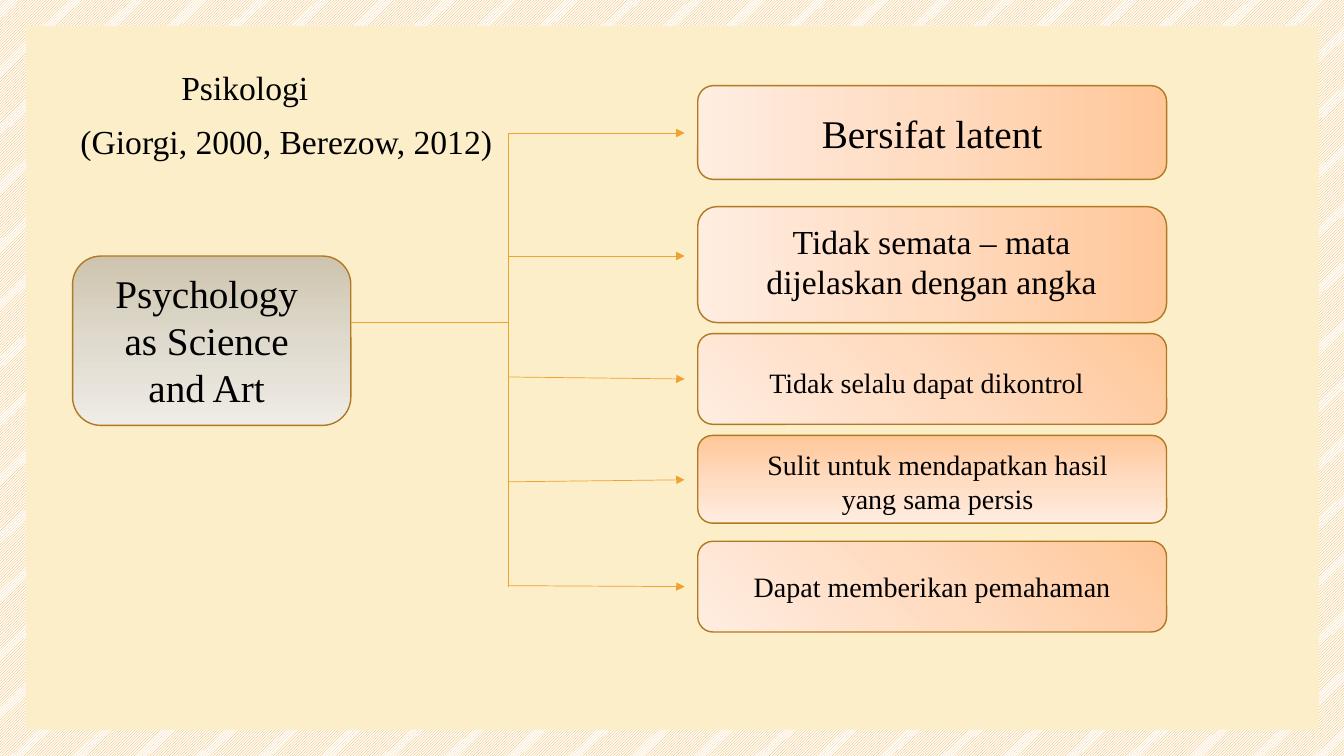
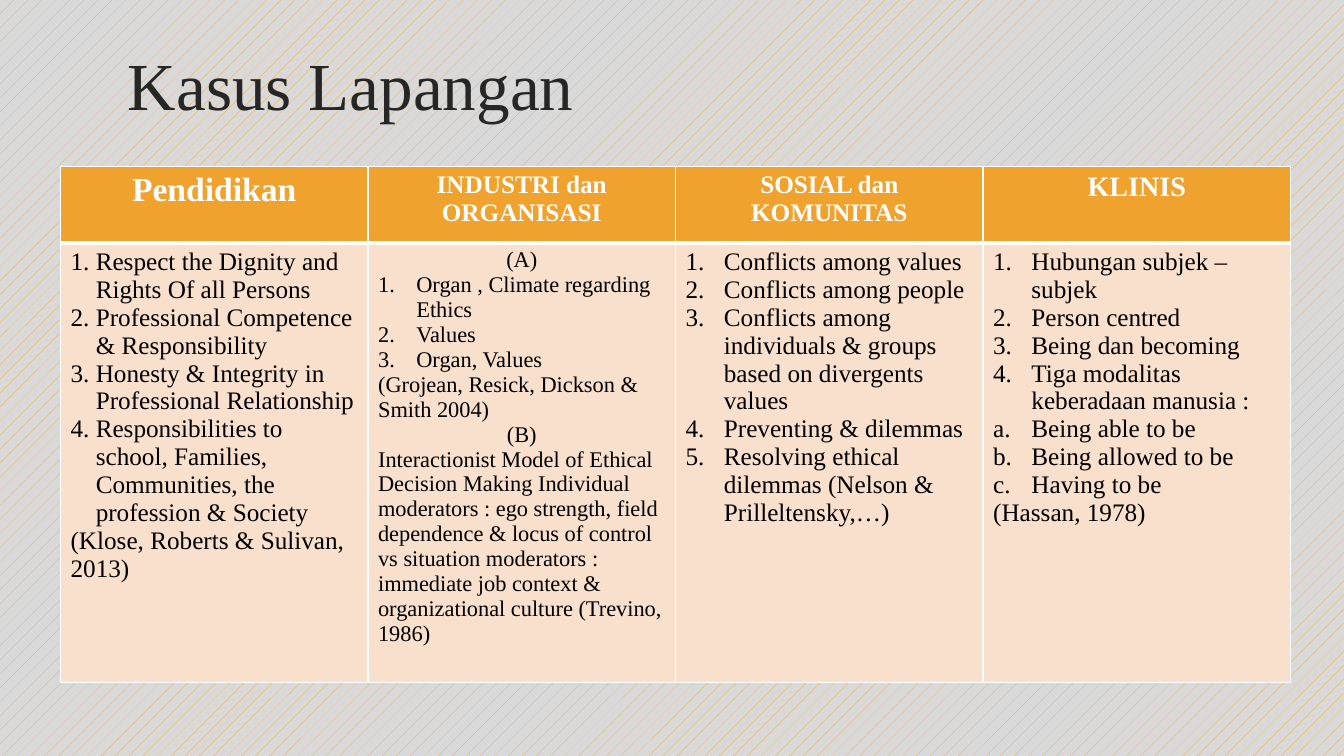
from lxml import etree
from pptx import Presentation
from pptx import util as u
from pptx.dml.color import RGBColor
from pptx.enum import dml, shapes, text
from pptx.oxml import ns

FONT = "Times New Roman"
BLACK = RGBColor(0x00, 0x00, 0x00)
WHITE = RGBColor(0xFF, 0xFF, 0xFF)
CHARCOAL = RGBColor(0x26, 0x26, 0x26)
ORANGE = RGBColor(0xF0, 0xA2, 0x2E)
BROWN = RGBColor(0xB2, 0x78, 0x22)
CREAM = RGBColor(0xFB, 0xEE, 0xC9)
GREY = RGBColor(0xD9, 0xD9, 0xD9)
PEACH = RGBColor(0xF9, 0xE0, 0xCD)
STONE_STOPS = [RGBColor(0xCE, 0xC4, 0xAE), RGBColor(0xDF, 0xDA, 0xCD), RGBColor(0xEF, 0xEC, 0xE6)]
PEACH_STOPS = [RGBColor(0xFF, 0xC7, 0x98), RGBColor(0xFF, 0xDB, 0xC0), RGBColor(0xFF, 0xED, 0xE0)]

CENTER = text.PP_ALIGN.CENTER
LEFT = text.PP_ALIGN.LEFT
MIDDLE = text.MSO_ANCHOR.MIDDLE
TOP = text.MSO_ANCHOR.TOP
CORNER = "corner"

TRAITS = [
    (0.85, 0.93, 180, 28, "Bersifat latent", None),
    (2.05, 1.15, 180, 24, "Tidak semata – mata dijelaskan dengan angka", (0.41, 0.09, 3.82, 0.91)),
    (3.31, 0.9, 135, 20, "Tidak selalu dapat dikontrol", (0.15, 0.27, 4.24, 0.44)),
    (4.32, 0.87, 90, 20, "Sulit untuk mendapatkan hasil yang sama persis", (0.41, 0.07, 3.94, 0.77)),
    (5.37, 0.9, CORNER, 20, "Dapat memberikan pemahaman", None),
]
ARROWS = [(1.32, 1.32), (2.54, 2.54), (3.74, 3.76), (4.78, 4.76), (5.81, 5.82)]

HEADERS = [("Pendidikan", 24), ("INDUSTRI dan ORGANISASI", 18),
           ("SOSIAL dan KOMUNITAS", 18), ("KLINIS", 20)]
NUMBER, LETTER, MIDLINE, PLAIN = "arabicPeriod", "alphaLcPeriod", "center", "plain"
CASES = [
    (18, 0.25, [
        (NUMBER, "Respect the Dignity and Rights Of all Persons"),
        (NUMBER, "Professional Competence & Responsibility"),
        (NUMBER, "Honesty & Integrity in Professional Relationship"),
        (NUMBER, "Responsibilities to school, Families, Communities, the profession & Society"),
        (PLAIN, "(Klose, Roberts & Sulivan, 2013)"),
    ]),
    (16, 0.38, [
        (MIDLINE, "(A)"),
        (NUMBER, "Organ , Climate regarding Ethics"),
        (NUMBER, "Values"),
        (NUMBER, "Organ, Values"),
        (PLAIN, "(Grojean, Resick, Dickson & Smith 2004)"),
        (MIDLINE, "(B)"),
        (PLAIN, "Interactionist Model of Ethical Decision Making Individual moderators : "
                "ego strength, field dependence & locus of control vs situation moderators : "
                "immediate job context & organizational culture (Trevino, 1986)"),
    ]),
    (18, 0.38, [
        (NUMBER, "Conflicts among values"),
        (NUMBER, "Conflicts among people"),
        (NUMBER, "Conflicts among individuals & groups based on divergents values"),
        (NUMBER, "Preventing & dilemmas"),
        (NUMBER, "Resolving ethical dilemmas (Nelson & Prilleltensky,…)"),
    ]),
    (18, 0.38, [
        (NUMBER, "Hubungan subjek – subjek"),
        (NUMBER, "Person centred"),
        (NUMBER, "Being dan becoming"),
        (NUMBER, "Tiga modalitas keberadaan manusia :"),
        (LETTER, "Being able to be"),
        (LETTER, "Being allowed to be"),
        (LETTER, "Having to be"),
        (PLAIN, "(Hassan, 1978)"),
    ]),
]


def inches(box):
    return [u.Inches(length) for length in box]


def add_element(parent, tag, **attributes):
    return etree.SubElement(parent, ns.qn(tag), attributes)


def add_color(parent, color):
    add_element(parent, "a:srgbClr", val=str(color))


def add_run(paragraph, words, size, color=BLACK, bold=False):
    run = paragraph.add_run()
    run.text = words
    run.font.name = FONT
    run.font.size = u.Pt(size)
    run.font.bold = bold
    run.font.color.rgb = color


def add_text(slide, box, lines, size, color=BLACK, align=LEFT, anchor=TOP):
    frame = slide.shapes.add_textbox(*inches(box)).text_frame
    frame.word_wrap = True
    frame.vertical_anchor = anchor
    for index, line in enumerate(lines):
        paragraph = frame.paragraphs[0] if index == 0 else frame.add_paragraph()
        paragraph.alignment = align
        add_run(paragraph, line, size, color)
    return frame


def set_gradient(shape, stops, direction):
    shape.fill.background()
    properties = shape.element.spPr
    gradient = etree.Element(ns.qn("a:gradFill"), rotWithShape="1")
    stop_list = add_element(gradient, "a:gsLst")
    for index, color in enumerate(stops):
        add_color(add_element(stop_list, "a:gs", pos=str(index * 50000)), color)
    if direction == CORNER:
        circle = add_element(gradient, "a:path", path="circle")
        add_element(circle, "a:fillToRect", l="100000", b="100000")
    else:
        add_element(gradient, "a:lin", ang=str(direction * 60000), scaled="0")
    properties.replace(properties.find(ns.qn("a:noFill")), gradient)


def add_card(slide, box, stops, direction):
    card = slide.shapes.add_shape(shapes.MSO_SHAPE.ROUNDED_RECTANGLE, *inches(box))
    card.shadow.inherit = False
    set_gradient(card, stops, direction)
    card.line.color.rgb = BROWN
    card.line.width = u.Pt(1)
    return card


def add_line(slide, start, end, arrow=False):
    line = slide.shapes.add_connector(shapes.MSO_CONNECTOR.STRAIGHT, *inches(start + end))
    line.line.color.rgb = ORANGE
    line.line.width = u.Pt(0.5)
    properties = line.element.spPr
    if arrow:
        add_element(properties.find(ns.qn("a:ln")), "a:tailEnd", type="triangle")
    add_element(properties, "a:effectLst")


def add_slide(presentation, pattern, back_color):
    slide = presentation.slides.add_slide(presentation.slide_layouts[6])
    fill = slide.background.fill
    fill.patterned()
    fill.pattern = pattern
    fill.fore_color.rgb = ORANGE
    fill.back_color.rgb = back_color
    return slide


def add_trait(slide, left, width, trait):
    top, height, direction, size, words, label = trait
    card = add_card(slide, (left, top, width, height), PEACH_STOPS, direction)
    if label:
        across, down, label_width, label_height = label
        add_text(slide, (left + across, top + down, label_width, label_height),
                 [words], size, align=CENTER)
        return
    frame = card.text_frame
    frame.word_wrap = True
    frame.vertical_anchor = MIDDLE
    frame.paragraphs[0].alignment = CENTER
    add_run(frame.paragraphs[0], words, size)


def add_branches(slide, start, trunk, tip):
    add_line(slide, (start, 3.2), (trunk, 3.2))
    add_line(slide, (trunk, ARROWS[0][0]), (trunk, ARROWS[-1][1]))
    for begin, end in ARROWS:
        add_line(slide, (trunk, begin), (tip, end), arrow=True)


def build_psychology(presentation):
    slide = add_slide(presentation, dml.MSO_PATTERN.DARK_UPWARD_DIAGONAL, WHITE)
    panel = slide.shapes.add_shape(shapes.MSO_SHAPE.RECTANGLE, *inches((0.26, 0.26, 12.82, 6.98)))
    panel.shadow.inherit = False
    panel.fill.solid()
    panel.fill.fore_color.rgb = CREAM
    panel.line.fill.background()

    heading = add_text(slide, (0.7, 0.59, 11, 5.9), ["Psikologi", "(Giorgi, 2000, Berezow, 2012)"], 24)
    first, second = heading.paragraphs
    first.line_spacing = second.line_spacing = 1.05
    first._p.get_or_add_pPr().set("marL", str(u.Inches(1)))
    second.space_before = u.Pt(9)

    add_card(slide, (0.72, 2.54, 2.76, 1.68), STONE_STOPS, 90)
    add_text(slide, (1.03, 2.62, 2.04, 1.51), ["Psychology as Science and Art"], 28, align=CENTER)
    for trait in TRAITS:
        add_trait(slide, 6.92, 4.65, trait)
    add_branches(slide, 3.48, 5.04, 6.79)


def style_cell(cell, color, borders):
    properties = cell._tc.get_or_add_tcPr()
    for side, width in borders.items():
        border = add_element(properties, f"a:ln{side}", w=str(u.Pt(width)))
        add_color(add_element(border, "a:solidFill"), WHITE)
    cell.fill.solid()
    cell.fill.fore_color.rgb = color


def fill_case(cell, size, indent, lines):
    frame = cell.text_frame
    for index, (kind, words) in enumerate(lines):
        paragraph = frame.paragraphs[0] if index == 0 else frame.add_paragraph()
        paragraph.alignment = CENTER if kind == MIDLINE else LEFT
        if kind in (NUMBER, LETTER):
            properties = paragraph._p.get_or_add_pPr()
            properties.set("marL", str(u.Inches(indent)))
            properties.set("indent", str(-u.Inches(indent)))
            add_element(properties, "a:buAutoNum", type=kind)
        add_run(paragraph, words, size)


def add_case_table(slide, box):
    table = slide.shapes.add_table(2, len(HEADERS), *inches(box)).table
    table.rows[0].height = u.Inches(0.76)
    table.rows[1].height = u.Inches(box[3] - 0.76)
    for column, ((header, header_size), case) in enumerate(zip(HEADERS, CASES)):
        table.columns[column].width = u.Inches(box[2] / len(HEADERS))
        top, body = table.cell(0, column), table.cell(1, column)
        style_cell(top, ORANGE, {"L": 1, "R": 1, "T": 1, "B": 3})
        style_cell(body, PEACH, {"L": 1, "R": 1, "T": 3, "B": 1})
        paragraph = top.text_frame.paragraphs[0]
        paragraph.alignment = CENTER
        add_run(paragraph, header, header_size, WHITE, bold=True)
        fill_case(body, *case)


def build_cases(presentation):
    slide = add_slide(presentation, dml.MSO_PATTERN.PERCENT_5, GREY)
    title = add_text(slide, (1.17, 0.46, 11, 0.85), ["Kasus Lapangan"], 48, CHARCOAL, anchor=MIDDLE)
    title.paragraphs[0].line_spacing = 0.9
    add_case_table(slide, (0.6, 1.65, 12.2, 5.09))


def main():
    presentation = Presentation()
    presentation.slide_width = u.Inches(13.33)
    presentation.slide_height = u.Inches(7.5)
    build_psychology(presentation)
    build_cases(presentation)
    presentation.save("out.pptx")


if __name__ == "__main__":
    main()
